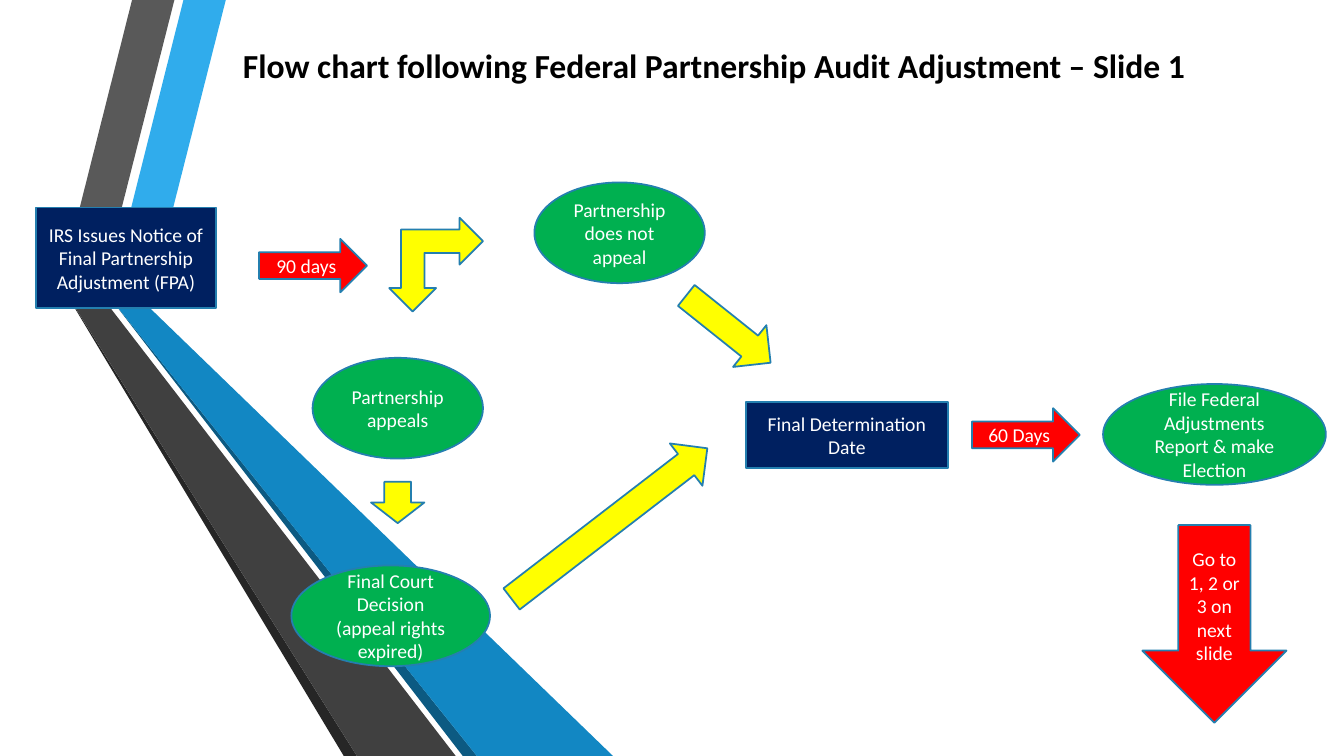
from dataclasses import dataclass

from pptx import Presentation
from pptx.dml.color import RGBColor as Rgb
from pptx.enum.shapes import MSO_SHAPE as Kind
from pptx.enum.text import MSO_ANCHOR as Anchor, MSO_AUTO_SIZE as Fit, PP_ALIGN as Align
from pptx.util import Pt

PX = 9144


@dataclass(frozen=True)
class Theme:
    """Colours, font and type sizes of the slide."""
    font: str = "Calibri"
    head: int = 24
    body: int = 14
    edge: float = 1.25
    ink: str = "000000"
    white: str = "FFFFFF"
    rim: str = "247FAF"
    navy: str = "002060"
    green: str = "00B050"
    red: str = "FF0000"
    yellow: str = "FFFF00"


THEME = Theme()

BANDS = [
    ("30ACEC", [(108, 294), (147, 304), (224, 0), (182, 0)]),
    ("595959", [(99, 292), (173, 0), (131, 0), (60, 282)]),
    ("262626", [(60, 282), (341, 750), (354, 750)]),
    ("0C5A82", [(108, 294), (459, 750), (473, 750)]),
    ("1287C3", [(108, 294), (473, 750), (608, 750), (147, 304)]),
    ("404040", [(60, 282), (354, 750), (452, 750), (106, 301), (99, 292)]),
]

BOXES = [
    ((36, 206, 178, 100), "IRS Issues Notice of Final Partnership Adjustment (FPA)"),
    ((740, 399, 200, 65), "Final Determination Date"),
]

OVALS = [
    ((530, 181, 169, 100), "Partnership does not appeal"),
    ((310, 355, 169, 100), "Partnership appeals"),
    ((289, 561, 197, 100), "Final Court Decision (appeal rights expired)"),
    ((1094, 381, 221, 100), "File Federal Adjustments Report & make Election"),
]

STEPS = [
    (Kind.RIGHT_ARROW, (257, 237, 107, 53), "90 days"),
    (Kind.RIGHT_ARROW, (964, 405, 107, 53), "60 Days"),
    (Kind.DOWN_ARROW, (1133, 521, 143, 196), "Go to 1, 2 or 3 on next slide"),
]

LINKS = [
    (Kind.LEFT_UP_ARROW, (386, 216, 93, 93), 180),
    (Kind.RIGHT_ARROW, (669, 300, 107, 53), 38.6),
    (Kind.DOWN_ARROW, (368, 478, 53, 41), 0),
    (Kind.RIGHT_ARROW, (482, 493, 245, 53), 322.4),
]


def scale(box):
    """Turn px lengths into EMU."""
    return [n * PX for n in box]


def write(frame, text, size, color, align, bold=False):
    """Put one formatted paragraph into a text frame."""
    frame.text = text
    para = frame.paragraphs[0]
    para.alignment = align
    font = para.font
    font.name, font.size, font.bold = THEME.font, Pt(size), bold
    font.color.rgb = Rgb.from_string(color)


def paint(shape, color):
    """Give a shape a flat fill and no shadow."""
    shape.shadow.inherit = False
    shape.fill.solid()
    shape.fill.fore_color.rgb = Rgb.from_string(color)


def add_band(slide, color, points):
    """Draw one borderless polygon of the backdrop."""
    path = slide.shapes.build_freeform(*points[0], scale=PX)
    path.add_line_segments(points[1:], close=True)
    band = path.convert_to_shape()
    paint(band, color)
    band.line.fill.background()


def add_node(slide, kind, box, color, text="", turn=0):
    """Draw one outlined chart shape, with its label if any."""
    node = slide.shapes.add_shape(kind, *scale(box))
    paint(node, color)
    node.line.color.rgb = Rgb.from_string(THEME.rim)
    node.line.width = Pt(THEME.edge)
    node.rotation = turn
    if text:
        frame = node.text_frame
        frame.word_wrap = True
        frame.vertical_anchor = Anchor.MIDDLE
        write(frame, text, THEME.body, THEME.white, Align.CENTER)


def set_title(slide, box, text):
    """Place and fill the title."""
    title = slide.shapes.title
    title.left, title.top, title.width, title.height = scale(box)
    frame = title.text_frame
    frame.word_wrap = False
    frame.auto_size = Fit.SHAPE_TO_FIT_TEXT
    frame.vertical_anchor = Anchor.TOP
    write(frame, text, THEME.head, THEME.ink, Align.LEFT, True)


def main():
    """Build and save the flow chart slide."""
    deck = Presentation()
    deck.slide_width, deck.slide_height = scale((1333, 750))
    slide = deck.slides.add_slide(deck.slide_layouts[5])
    set_title(slide, (231, 40, 964, 50),
              "Flow chart following Federal Partnership Audit Adjustment – Slide 1")
    for color, points in BANDS:
        add_band(slide, color, points)
    for box, text in BOXES:
        add_node(slide, Kind.RECTANGLE, box, THEME.navy, text)
    for box, text in OVALS:
        add_node(slide, Kind.OVAL, box, THEME.green, text)
    for kind, box, text in STEPS:
        add_node(slide, kind, box, THEME.red, text)
    for kind, box, turn in LINKS:
        add_node(slide, kind, box, THEME.yellow, turn=turn)
    deck.save("out.pptx")


if __name__ == "__main__":
    main()
